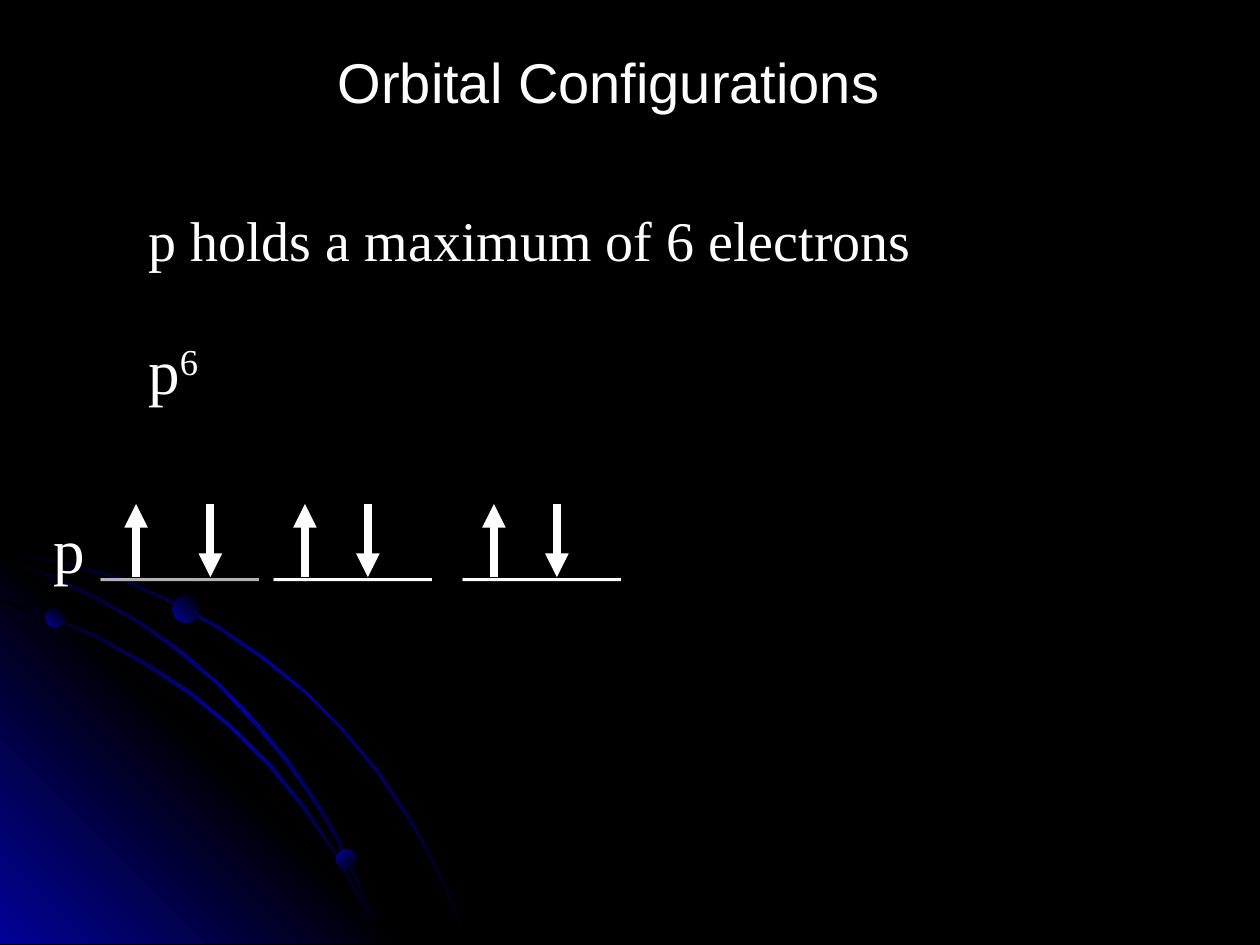
from dataclasses import dataclass

from lxml.etree import SubElement
from pptx import Presentation
from pptx.dml.color import RGBColor
from pptx.enum.shapes import MSO_CONNECTOR as Link, MSO_SHAPE as Kind
from pptx.enum.text import MSO_ANCHOR as Anchor, MSO_AUTO_SIZE as Fit, PP_ALIGN as Align
from pptx.oxml.ns import qn
from pptx.util import Inches, Pt

BLACK = RGBColor(0x00, 0x00, 0x00)
WHITE = RGBColor(0xFF, 0xFF, 0xFF)
GREY = RGBColor(0xB2, 0xB2, 0xB2)
BLUE = RGBColor(0x01, 0x01, 0x99)
SERIF, SANS = "Times New Roman", "Arial"

Stops = list[tuple[int, RGBColor]]
GLOW: Stops = [(0, BLACK), (50, BLUE), (100, BLACK)]
CORNER: Stops = [(0, BLUE), (50, BLACK), (100, BLUE)]
BALL: Stops = [(0, BLUE), (100, BLACK)]


@dataclass
class Patch:
    """A closed outline; its points are in hundredths of an inch."""
    points: list[tuple[int, int]]
    stops: Stops
    angle: int


@dataclass
class Dot:
    left: float
    top: float
    size: float
    angle: int


@dataclass
class Pair:
    """The two electrons of one orbital: x of the up and the down arrow."""
    up: float
    down: float


@dataclass
class Part:
    text: str
    color: RGBColor = WHITE
    raised: bool = False


PATCHES = [
    Patch([(57, 447), (28, 441), (0, 435), (0, 438), (28, 443), (56, 449),
           (97, 461), (135, 478), (173, 499), (208, 523), (241, 549),
           (271, 579), (298, 612), (323, 649), (337, 673), (350, 698),
           (360, 723), (370, 749), (372, 749), (362, 723), (352, 698),
           (339, 673), (325, 648), (300, 611), (272, 578), (242, 548),
           (209, 521), (174, 497), (136, 477), (98, 459)], GLOW, 45),
    Patch([(322, 749), (0, 749), (0, 427)], CORNER, 315),
    Patch([(285, 714), (294, 732), (301, 749), (303, 749), (296, 730),
           (286, 712), (266, 676), (242, 640), (215, 606), (184, 576),
           (152, 549), (117, 526), (79, 505), (41, 488), (0, 475), (0, 477),
           (39, 490), (77, 507), (115, 528), (150, 551), (183, 578),
           (213, 608), (240, 641), (265, 677)], GLOW, 45),
    Patch([(0, 442), (0, 444), (36, 457), (74, 475), (109, 494), (142, 518),
           (173, 544), (202, 575), (227, 605), (252, 641), (267, 667),
           (280, 694), (292, 722), (301, 749), (303, 749), (294, 720),
           (282, 693), (269, 665), (254, 639), (229, 603), (204, 573),
           (175, 543), (144, 516), (111, 493), (76, 473), (39, 455)], GLOW, 45),
]
DOTS = [Dot(0.36, 4.83, 0.15, 315), Dot(2.67, 6.74, 0.16, 45),
        Dot(1.37, 4.73, 0.21, 315)]
PAIRS = [Pair(1.08, 1.67), Pair(2.42, 2.92), Pair(3.92, 4.42)]
HIGH, LOW = 4, 4.58


def shade(shape, stops: Stops, angle: int) -> None:
    """Give a shape a linear gradient, angle clockwise, and no outline."""
    shape.shadow.inherit = False
    shape.line.fill.background()
    shape.fill.gradient()
    grad = shape._element.spPr.find(qn("a:gradFill"))
    rows = grad.find(qn("a:gsLst"))
    for old in list(rows):
        rows.remove(old)
    for pos, color in stops:
        stop = SubElement(rows, qn("a:gs"), pos=str(pos * 1000))
        SubElement(stop, qn("a:srgbClr"), val=str(color))
    grad.find(qn("a:lin")).set("ang", str(angle * 60000))


def draw_patch(slide, patch: Patch) -> None:
    pen = slide.shapes.build_freeform(*patch.points[0], scale=Inches(0.01))
    pen.add_line_segments(patch.points[1:], close=True)
    shade(pen.convert_to_shape(), patch.stops, patch.angle)


def draw_dot(slide, dot: Dot) -> None:
    size = Inches(dot.size)
    ball = slide.shapes.add_shape(
        Kind.OVAL, Inches(dot.left), Inches(dot.top), size, size)
    shade(ball, BALL, dot.angle)


def draw_arrow(slide, x: float, start: float, end: float) -> None:
    arrow = slide.shapes.add_connector(
        Link.STRAIGHT, Inches(x), Inches(start), Inches(x), Inches(end))
    arrow.line.color.rgb = WHITE
    arrow.line.width = Pt(4.5)
    SubElement(arrow.line._get_or_add_ln(), qn("a:tailEnd"), type="triangle")
    SubElement(arrow._element.spPr, qn("a:effectLst"))


def write(shape, parts: list[Part], *, size: int = 36, font: str = SERIF,
          wrap: bool = True) -> None:
    frame = shape.text_frame
    frame.word_wrap = wrap
    frame.auto_size = Fit.NONE
    frame.vertical_anchor = Anchor.TOP
    line = frame.paragraphs[0]
    line.alignment = Align.LEFT
    for part in parts:
        run = line.add_run()
        run.text = part.text
        run.font.size = Pt(size)
        run.font.name = font
        run.font.color.rgb = part.color
        if part.raised:
            run._r.get_or_add_rPr().set("baseline", "30000")


def add_box(slide, left: float, top: float, width: float, height: float):
    return slide.shapes.add_textbox(
        Inches(left), Inches(top), Inches(width), Inches(height))


def main() -> None:
    deck = Presentation()
    deck.slide_width, deck.slide_height = Inches(10), Inches(7.5)
    slide = deck.slides.add_slide(deck.slide_layouts[5])
    slide.background.fill.solid()
    slide.background.fill.fore_color.rgb = BLACK

    for patch in PATCHES:
        draw_patch(slide, patch)
    for dot in DOTS:
        draw_dot(slide, dot)

    write(add_box(slide, 0.33, 4, 7.33, 0.7),
          [Part("p "), Part("_____", GREY), Part(" _____  _____")])
    for pair in PAIRS:
        draw_arrow(slide, pair.up, LOW, HIGH)
        draw_arrow(slide, pair.down, HIGH, LOW)

    write(add_box(slide, 1.08, 2.58, 6.17, 0.7),
          [Part("p"), Part("6", raised=True)])
    write(add_box(slide, 1.08, 1.58, 7.67, 0.63),
          [Part("p holds a maximum of 6 electrons")], size=32)

    title = slide.shapes.title
    title.left, title.top = Inches(2.58), Inches(0.33)
    title.width, title.height = Inches(4.54), Inches(0.64)
    write(title, [Part("Orbital Configurations")], size=32, font=SANS, wrap=False)

    deck.save("out.pptx")


if __name__ == "__main__":
    main()
